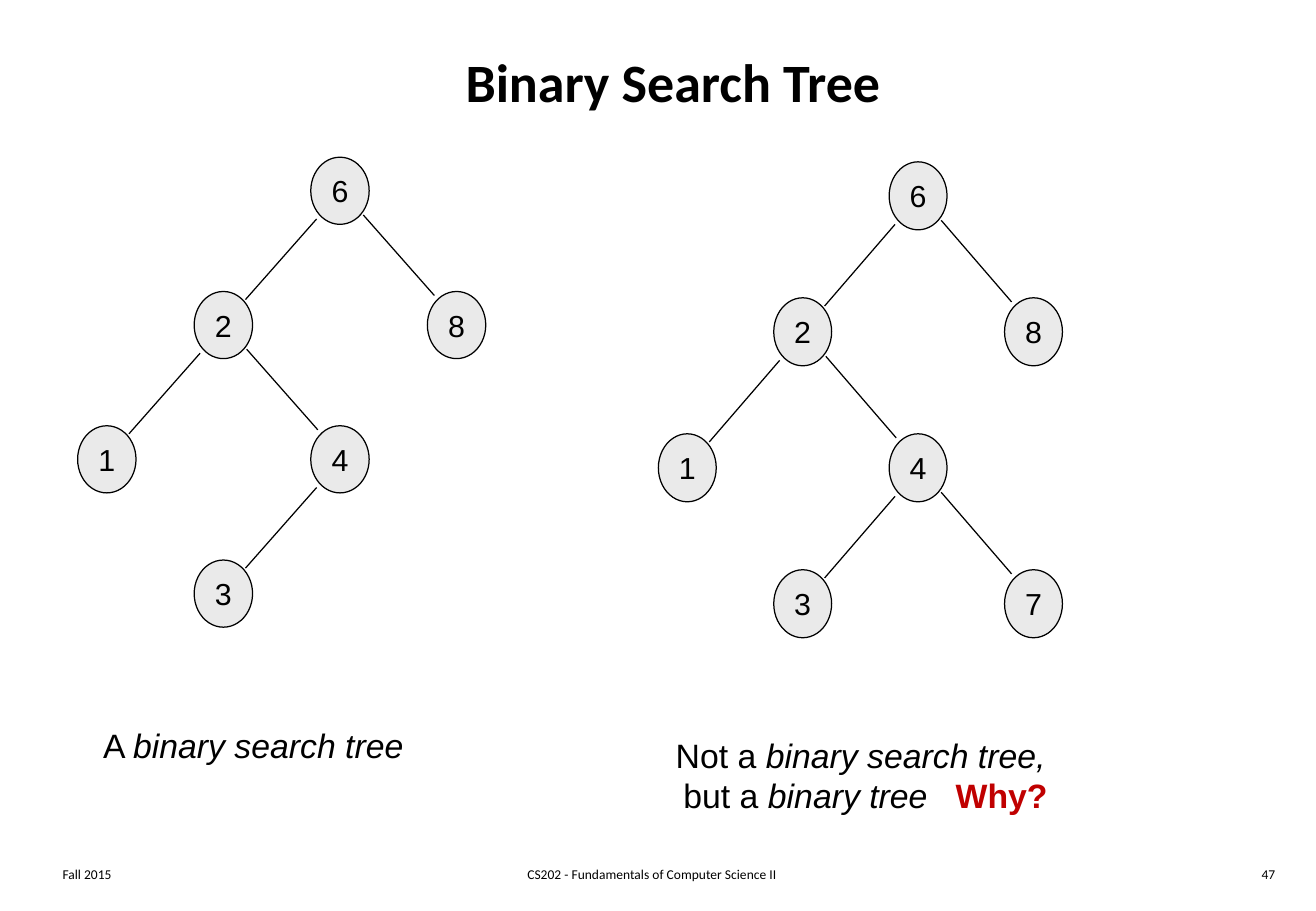
from dataclasses import dataclass, field

from lxml import etree
from pptx import Presentation
from pptx.dml.color import RGBColor
from pptx.enum.shapes import MSO_CONNECTOR, MSO_SHAPE
from pptx.enum.text import MSO_ANCHOR, PP_ALIGN
from pptx.oxml.ns import qn
from pptx.util import Pt

OVAL, LINE = MSO_SHAPE.OVAL, MSO_CONNECTOR.STRAIGHT
LEFT, CENTER, RIGHT = PP_ALIGN.LEFT, PP_ALIGN.CENTER, PP_ALIGN.RIGHT
TOP, MIDDLE = MSO_ANCHOR.TOP, MSO_ANCHOR.MIDDLE

BLACK = RGBColor(0x00, 0x00, 0x00)
GREY = RGBColor(0xEA, 0xEA, 0xEA)
RED = RGBColor(0xC0, 0x00, 0x00)

FOOTER = {"name": "Calibri", "size": Pt(8)}
TITLE = {"name": "Calibri", "size": Pt(32), "bold": True}
KEY = {"name": "Arial", "size": Pt(18)}
CAPTION = {"name": "Arial", "size": Pt(20)}
ITALIC = {"italic": True}
WHY = {"bold": True, "color": RED}


@dataclass
class Run:
    text: str
    fmt: dict = field(default_factory=dict)
    spacing: float = 0


@dataclass
class TextBox:
    left: float
    top: float
    width: float
    height: float
    paragraphs: list[list[Run]]
    fmt: dict
    align: PP_ALIGN = LEFT
    anchor: MSO_ANCHOR = TOP
    wrap: bool = True


@dataclass
class Node:
    key: int
    column: int
    row: int
    parent: int | None = None


@dataclass
class Tree:
    root_x: float  # centre of the root
    root_y: float
    column_step: float
    row_step: float
    node_width: float
    node_height: float
    nodes: list[Node]


SEARCH_NODES = [Node(6, 0, 0), Node(2, -1, 1, 6), Node(8, 1, 1, 6),
                Node(1, -2, 2, 2), Node(4, 0, 2, 2), Node(3, -1, 3, 4)]
TREES = [
    Tree(201.5, 113.1, 69.1, 79.6, 34.6, 39.8, SEARCH_NODES),
    Tree(544.2, 116.1, 68.4, 80.6, 34.3, 40.3,
         SEARCH_NODES + [Node(7, 1, 3, 4)]),
]

TEXTS = [
    TextBox(30, 12, 738, 72, [[Run("Binary Search Tree")]], TITLE, CENTER, MIDDLE),
    TextBox(54, 426, 193, 31, [[Run("A "), Run("binary search tree", ITALIC)]],
            CAPTION, wrap=False),
    TextBox(348, 432, 330, 56,
            [[Run("Not a "), Run("binary search tree, ", ITALIC)],
             [Run("but a "), Run("binary tree", ITALIC),
              Run(" ", spacing=11), Run("Why?", WHY)]],
            CAPTION, CENTER),
    TextBox(30, 510, 163, 18, [[Run("Fall 2015")]], FOOTER),
    TextBox(240.5, 510, 292, 18,
            [[Run("CS202 - Fundamentals of Computer Science II")]], FOOTER, CENTER),
    TextBox(600, 510, 163, 18, [[Run("47")]], FOOTER, RIGHT),
]


def add_run(p, run: Run, base: dict) -> None:
    r = p.add_run()
    r.text = run.text
    fmt = {"color": BLACK, **base, **run.fmt}
    r.font.color.rgb = fmt.pop("color")
    for name, value in fmt.items():
        setattr(r.font, name, value)
    if run.spacing:
        r._r.get_or_add_rPr().set("spc", str(round(run.spacing * 100)))


def add_text(s, box: TextBox) -> None:
    sp = s.shapes.add_textbox(Pt(box.left), Pt(box.top), Pt(box.width), Pt(box.height))
    tf = sp.text_frame
    tf.word_wrap = box.wrap
    tf.vertical_anchor = box.anchor
    for i, runs in enumerate(box.paragraphs):
        p = tf.add_paragraph() if i else tf.paragraphs[0]
        p.alignment = box.align
        for run in runs:
            add_run(p, run, box.fmt)


def add_node(group, tree: Tree, node: Node) -> None:
    x = tree.root_x + node.column * tree.column_step
    y = tree.root_y + node.row * tree.row_step
    sp = group.shapes.add_shape(OVAL, Pt(x - tree.node_width / 2), Pt(y - tree.node_height / 2),
                                Pt(tree.node_width), Pt(tree.node_height))
    sp.shadow.inherit = False
    sp.fill.solid()
    sp.fill.fore_color.rgb = GREY
    sp.line.color.rgb = BLACK
    sp.line.width = Pt(0.75)
    tf = sp.text_frame
    tf.word_wrap = False
    tf.vertical_anchor = MIDDLE
    p = tf.paragraphs[0]
    p.alignment = CENTER
    add_run(p, Run(str(node.key)), KEY)


def add_edge(group, tree: Tree, parent: Node, child: Node) -> None:
    side = child.column - parent.column
    x = tree.root_x + parent.column * tree.column_step
    y = tree.root_y + parent.row * tree.row_step
    # Shares of a row step where the edge starts and ends
    start, end = (0.21, 0.81) if side < 0 else (0.18, 0.78)
    cxn = group.shapes.add_connector(
        LINE,
        Pt(x + side * 0.2 * tree.column_step), Pt(y + start * tree.row_step),
        Pt(x + side * 0.81 * tree.column_step), Pt(y + end * tree.row_step))
    cxn.line.color.rgb = BLACK
    cxn.line.width = Pt(0.75)
    etree.SubElement(cxn._element.spPr, qn("a:effectLst"))


def add_tree(s, tree: Tree) -> None:
    group = s.shapes.add_group_shape()
    by_key = {node.key: node for node in tree.nodes}
    for node in tree.nodes:
        add_node(group, tree, node)
    for node in tree.nodes:
        if node.parent is not None:
            add_edge(group, tree, by_key[node.parent], node)


def main() -> None:
    prs = Presentation()
    prs.slide_width, prs.slide_height = Pt(780), Pt(540)
    s = prs.slides.add_slide(prs.slide_layouts[6])
    # Trees
    for tree in TREES:
        add_tree(s, tree)
    # Title, captions and footer
    for box in TEXTS:
        add_text(s, box)
    prs.save("out.pptx")


if __name__ == "__main__":
    main()
